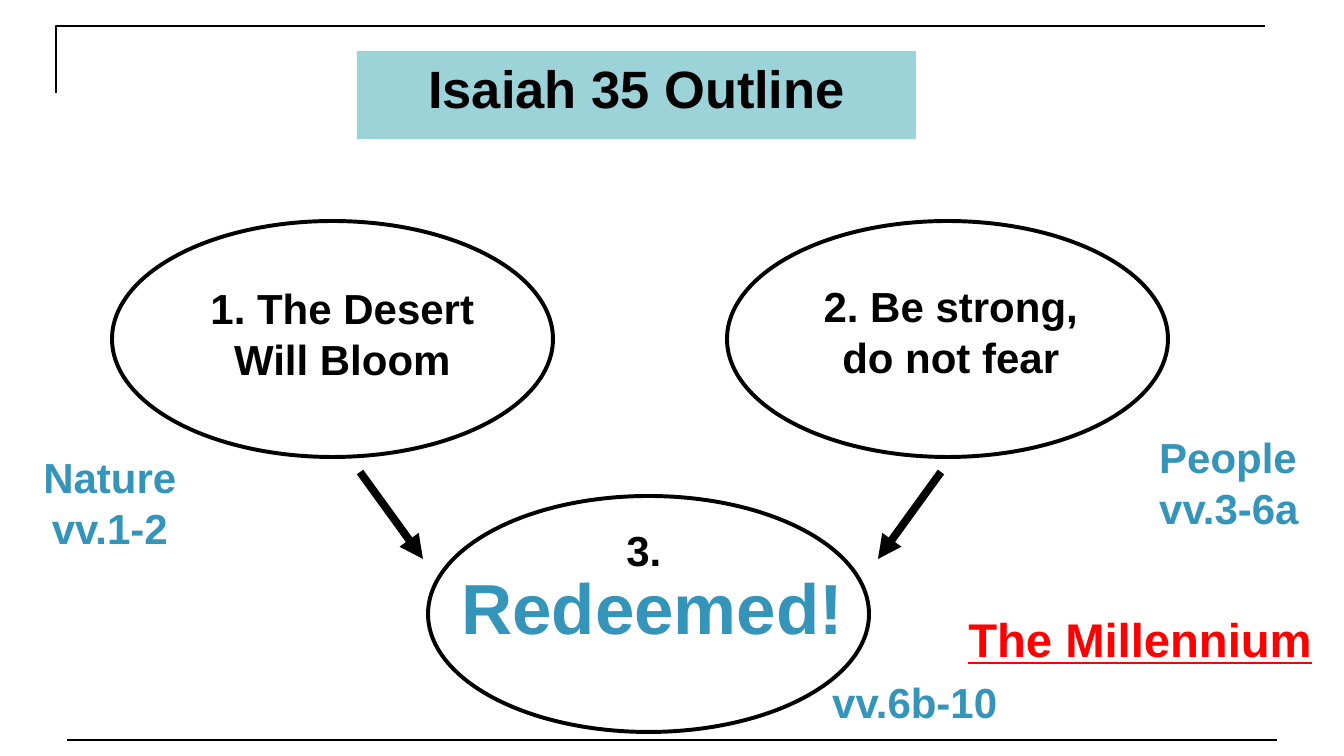
from lxml import etree
from pptx import Presentation
from pptx import util as u
from pptx.dml.color import RGBColor
from pptx.enum import shapes, text
from pptx.oxml.ns import qn

EMU_PER_PX = 9676
BLACK = RGBColor(0x00, 0x00, 0x00)
BLUE = RGBColor(0x34, 0x94, 0xBA)
RED = RGBColor(0xFF, 0x00, 0x00)
TEAL = RGBColor(0x9B, 0xD3, 0xD9)
LEFT, CENTER = text.PP_ALIGN.LEFT, text.PP_ALIGN.CENTER

SLIDE_SIZE = (1344, 756)
TITLE = ("Isaiah 35 Outline", (357, 51, 559, 88))
FOOT_RULE = (67, 740, 1277, 740)
CORNER_RULE = [(56, 93), (56, 26), (1265, 26)]
OVAL_SIZE = (441, 236)
OVALS = [(112, 221), (428, 496), (727, 221)]
ARROWS = [(360, 472, 423, 559), (941, 472, 878, 559)]

# Box, lines as (text, alignment), format; "\v" breaks a line within a paragraph
LABELS = [
    ((200, 278, 285, 111), [("1. The Desert\vWill Bloom", CENTER)], {}),
    ((813, 276, 276, 111), [("2. Be strong,\vdo not fear", CENTER)], {}),
    ((452, 559, 404, 95), [("Redeemed!", LEFT)], dict(size=54, color=BLUE)),
    ((34, 447, 157, 111), [("Nature", LEFT), ("vv.1-2", CENTER)], dict(color=BLUE)),
    ((1150, 427, 160, 111), [("People\vvv.3-6a", LEFT)], dict(color=BLUE)),
    ((823, 672, 185, 60), [("vv.6b-10", LEFT)], dict(color=BLUE)),
    ((959, 606, 367, 67), [("The Millennium", LEFT)],
     dict(size=36, color=RED, underline=True)),
    ((617, 520, 55, 60), [("3.", LEFT)], {}),
]


def px(*lengths):
    return [u.Emu(length * EMU_PER_PX) for length in lengths]


def write(frame, lines, size=32, color=BLACK, underline=None, wrap=False):
    frame.word_wrap = wrap
    frame.vertical_anchor = text.MSO_ANCHOR.TOP
    if not wrap:
        frame.auto_size = text.MSO_AUTO_SIZE.SHAPE_TO_FIT_TEXT
    for i, (words, alignment) in enumerate(lines):
        paragraph = frame.paragraphs[0] if i == 0 else frame.add_paragraph()
        paragraph.text = words
        paragraph.alignment = alignment
        for run in paragraph.runs:
            font = run.font
            font.name, font.size, font.bold = "Arial", u.Pt(size), True
            font.underline = underline
            font.color.rgb = color


def outline(shape, width):
    shape.shadow.inherit = False
    shape.fill.background()
    shape.line.color.rgb = BLACK
    shape.line.width = u.Pt(width)


def add_line(slide, ends, width, arrow=False):
    connector = slide.shapes.add_connector(shapes.MSO_CONNECTOR.STRAIGHT, *px(*ends))
    connector.line.color.rgb = BLACK
    connector.line.width = u.Pt(width)
    if arrow:
        etree.SubElement(connector.line._get_or_add_ln(), qn("a:tailEnd"), type="triangle")
    etree.SubElement(connector._element.spPr, qn("a:effectLst"))


def main():
    deck = Presentation()
    deck.slide_width, deck.slide_height = px(*SLIDE_SIZE)
    slide = deck.slides.add_slide(deck.slide_layouts[6])

    add_line(slide, FOOT_RULE, 1.5)
    start, *corners = CORNER_RULE
    builder = slide.shapes.build_freeform(*start, scale=EMU_PER_PX)
    builder.add_line_segments(corners, close=False)
    outline(builder.convert_to_shape(), 1.5)

    words, box = TITLE
    title = slide.shapes.add_shape(shapes.MSO_SHAPE.RECTANGLE, *px(*box))
    title.shadow.inherit = False
    title.fill.solid()
    title.fill.fore_color.rgb = TEAL
    title.line.fill.background()
    write(title.text_frame, [(words, CENTER)], size=40, wrap=True)

    for corner in OVALS:
        oval = slide.shapes.add_shape(shapes.MSO_SHAPE.OVAL, *px(*corner, *OVAL_SIZE))
        outline(oval, 3)
    for box, lines, style in LABELS:
        write(slide.shapes.add_textbox(*px(*box)).text_frame, lines, **style)
    for ends in ARROWS:
        add_line(slide, ends, 6, arrow=True)

    deck.save("out.pptx")


if __name__ == "__main__":
    main()
